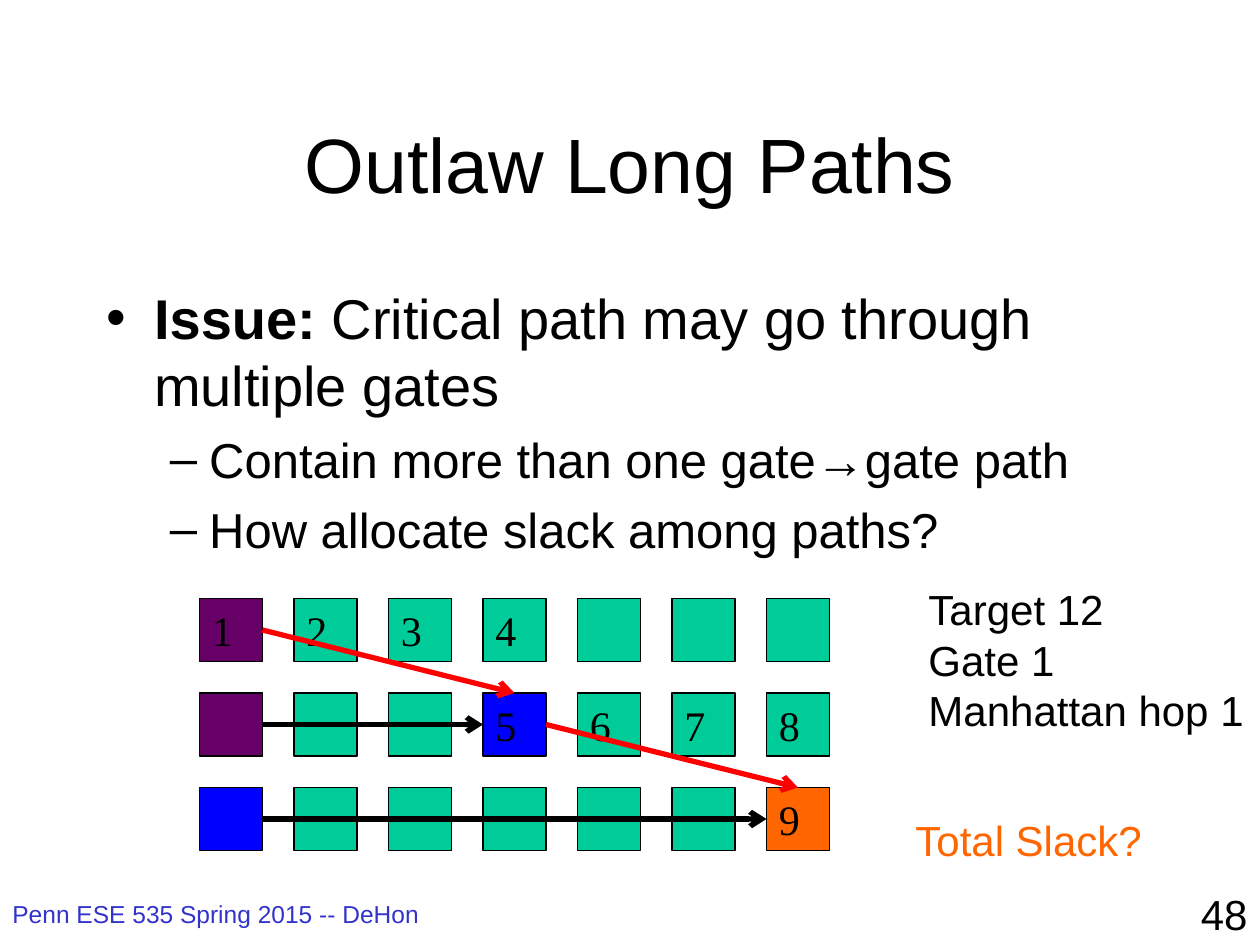
from lxml.etree import SubElement
from pptx import Presentation
from pptx.dml.color import RGBColor
from pptx.enum.shapes import MSO_CONNECTOR, MSO_SHAPE
from pptx.enum.text import MSO_ANCHOR, MSO_AUTO_SIZE, PP_ALIGN
from pptx.oxml.ns import qn
from pptx.util import Pt

COLORS = {
    "black": "000000",
    "footer": "3333CC",
    "purple": "660066",
    "green": "00CC99",
    "blue": "0000FF",
    "orange": "FF6600",
    "red": "FF0000",
}
GATE_ROWS = [
    ["1", "2", "3", "4", "", "", ""],
    ["", "", "", "5", "6", "7", "8"],
    ["", "", "", "", "", "", "9"],
]
GATE_COLORS = {
    (0, 0): "purple",
    (1, 0): "purple",
    (1, 3): "blue",
    (2, 0): "blue",
    (2, 6): "orange",
}
PATHS = [
    ((0, 0), (1, 3), 0, "red"),
    ((1, 0), (1, 3), 1, "black"),
    ((1, 3), (2, 6), 0, "red"),
    ((2, 0), (2, 6), 1, "black"),
]
GATE_LEFT, GATE_TOP, GATE_SIZE, GATE_PITCH = 114, 342, 36, 54


def rgb(color):
    return RGBColor.from_string(COLORS[color])


def write(para, text, size=24, font="Arial", color="black", bold=False, align=PP_ALIGN.LEFT):
    para.alignment = align
    span = para.add_run()
    span.text = text
    span.font.size = Pt(size)
    span.font.name = font
    span.font.bold = bold
    span.font.color.rgb = rgb(color)


def add_bullet(para, mark, left, hanging):
    properties = para._p.get_or_add_pPr()
    properties.set("marL", str(Pt(left)))
    properties.set("indent", str(-Pt(hanging)))
    SubElement(properties, qn("a:buFont"), typeface="Arial")
    SubElement(properties, qn("a:buChar"), char=mark)


def add_box(page, left, top, width, height, wrap=True):
    box = page.shapes.add_textbox(Pt(left), Pt(top), Pt(width), Pt(height))
    box.text_frame.word_wrap = wrap
    return box.text_frame


def add_lines(page, lines, left, top, width, height, wrap=True, **style):
    frame = add_box(page, left, top, width, height, wrap)
    for index, line in enumerate(lines):
        para = frame.add_paragraph() if index else frame.paragraphs[0]
        write(para, line, **style)


def add_title(page, text):
    title = page.shapes.title
    title.left, title.top, title.width, title.height = Pt(54), Pt(48), Pt(612), Pt(90)
    frame = title.text_frame
    frame.auto_size = MSO_AUTO_SIZE.NONE
    frame.vertical_anchor = MSO_ANCHOR.MIDDLE
    write(frame.paragraphs[0], text, size=44, align=PP_ALIGN.CENTER)


def add_issue(page):
    frame = add_box(page, 54, 156, 612, 192)
    frame.margin_top = Pt(6)
    para = frame.paragraphs[0]
    add_bullet(para, "•", 27, 27)
    write(para, "Issue:", size=32, bold=True)
    write(para, " Critical path may go through multiple gates", size=32)
    for text in ("Contain more than one gate→gate path", "How allocate slack among paths?"):
        para = frame.add_paragraph()
        para.level = 1
        para.space_before = Pt(6.5)
        add_bullet(para, "–", 58.5, 22.5)
        write(para, text, size=28)


def add_gate(page, row, column, label):
    gate = page.shapes.add_shape(
        MSO_SHAPE.RECTANGLE,
        Pt(GATE_LEFT + column * GATE_PITCH),
        Pt(GATE_TOP + row * GATE_PITCH),
        Pt(GATE_SIZE),
        Pt(GATE_SIZE),
    )
    gate.shadow.inherit = False
    gate.fill.solid()
    gate.fill.fore_color.rgb = rgb(GATE_COLORS.get((row, column), "green"))
    gate.line.color.rgb = rgb("black")
    gate.line.width = Pt(0.75)
    if label:
        frame = gate.text_frame
        frame.word_wrap = False
        frame.vertical_anchor = MSO_ANCHOR.MIDDLE
        write(frame.paragraphs[0], label, font="Times New Roman")
    return gate


def add_path(page, source, target, target_side, color):
    arrow = page.shapes.add_connector(MSO_CONNECTOR.STRAIGHT, 0, 0, 0, 0)
    arrow.begin_connect(source, 3)
    arrow.end_connect(target, target_side)
    arrow.line.color.rgb = rgb(color)
    arrow.line.width = Pt(3)
    SubElement(arrow.line._get_or_add_ln(), qn("a:tailEnd"), type="arrow")
    SubElement(arrow._element.spPr, qn("a:effectLst"))


def main():
    deck = Presentation()
    deck.slide_width, deck.slide_height = Pt(720), Pt(540)
    page = deck.slides.add_slide(deck.slide_layouts[5])
    add_title(page, "Outlaw Long Paths")
    add_issue(page)
    add_lines(page, ["Penn ESE 535 Spring 2015 -- DeHon"], 0, 510, 276, 30, size=14, color="footer")
    add_lines(page, ["48"], 570, 504, 150, 36, align=PP_ALIGN.RIGHT)
    gates = {
        (row, column): add_gate(page, row, column, label)
        for row, labels in enumerate(GATE_ROWS)
        for column, label in enumerate(labels)
    }
    for source, target, side, color in PATHS:
        add_path(page, gates[source], gates[target], side, color)
    add_lines(page, ["Target 12", "Gate 1", "Manhattan hop 1"], 523.5, 330, 196.5, 94.5, wrap=False)
    add_lines(page, ["Total Slack?"], 516, 462, 145.5, 36, wrap=False, color="orange")
    deck.save("out.pptx")


if __name__ == "__main__":
    main()
